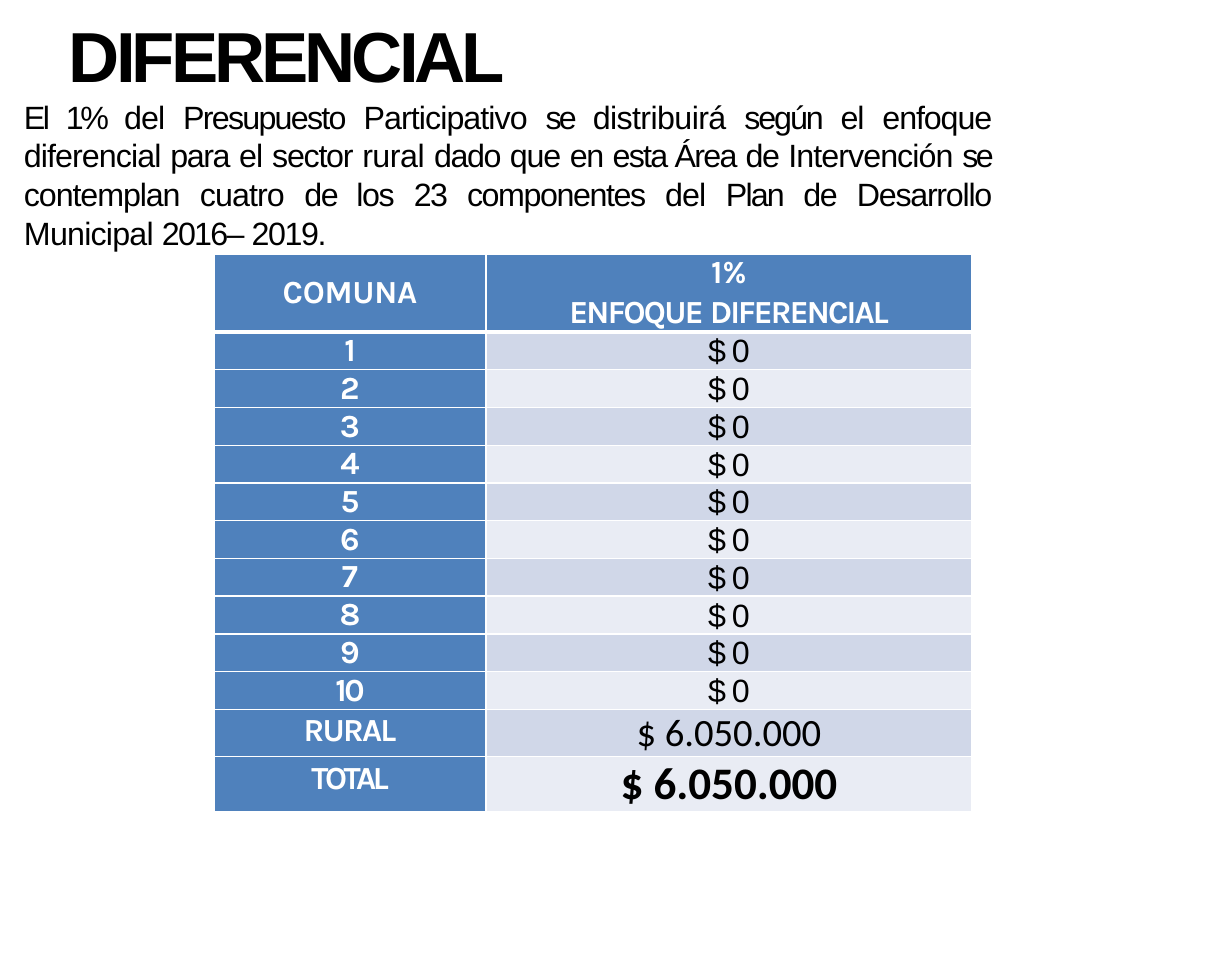
from lxml import etree
from pptx import Presentation
from pptx import util as u
from pptx.dml.color import RGBColor
from pptx.enum import text
from pptx.oxml.ns import qn

PX = 7890  # EMU per px
COLORS = {"ink": "000000", "white": "FFFFFF", "blue": "4F81BC",
          "band": "D0D7E8", "pale": "E9ECF4"}
SLIDE = (1232, 958)
TITLE_BOX = (68, 10, 511, 87)
INTRO_BOX = (23, 96, 968, 158)
TABLE_AT = (214, 254)
COLS = (272, 486)
HEADER_H, ROW_H, RURAL_H, TOTAL_H = 74, 37, 44, 50
LINE = 23.4  # points

TITLE = "DIFERENCIAL"
# Text with its letter spacing in points
INTRO = [
    ("El ", -1.7), ("1% ", -2.2), ("del ", -0.6), ("Presupuesto ", -1.1),
    ("Participativo ", -0.6), ("se ", -1.7), ("distribuirá ", -0.4),
    ("según ", -1.3), ("el ", -0.6), ("enfoque ", -0.7),
    ("diferencial ", -0.6), ("para ", -0.9), ("el ", -0.6),
    ("sector ", -0.8), ("rural ", -0.3), ("dado ", -0.9), ("que ", -0.8),
    ("en ", -0.9), ("esta Área ", -1.1), ("de ", -0.9),
    ("Intervención ", -0.6), ("se ", -1.7), ("contemplan ", -0.7),
    ("cuatro ", -0.6), ("de los ", -0.9), ("23 ", -1), ("componentes ", -0.9),
    ("del ", -0.6), ("Plan ", -1.2), ("de ", -0.9), ("Desarrollo ", -0.8),
    ("Municipal ", -0.5), ("2016– ", -1.1), ("2019.", -0.9),
]
HEADERS = ([("COMUNA", -0.2)],
           [("1%", -0.3)], [("ENFOQUE ", -1.1), ("DIFERENCIAL", -1.2)])
COMUNAS = [(str(n), -1.6 if n == 10 else 0, "$ 0") for n in range(1, 11)]
SUMS = [("RURAL", -1.1, "$ 6.050.000", 24, False),
        ("TOTAL", -2.1, "$ 6.050.000", 28, True)]


def write(p, runs, font="Arial", size=20, color="ink", bold=False,
          align=text.PP_ALIGN.CENTER, line=None, before=0):
    p.alignment = align
    p.space_before = u.Pt(before)
    if line:
        p.line_spacing = u.Pt(line)
    for words, spacing in runs:
        r = p.add_run()
        r.text = words
        r.font.name, r.font.size, r.font.bold = font, u.Pt(size), bold
        r.font.color.rgb = RGBColor.from_string(COLORS[color])
        r._r.get_or_add_rPr().set("spc", str(round(spacing * 100)))


def place(sp, box):
    sp.left, sp.top, sp.width, sp.height = (v * PX for v in box)


def set_frame(tf, anchor):
    tf.word_wrap = True
    tf.auto_size = text.MSO_AUTO_SIZE.NONE
    tf.vertical_anchor = anchor
    tf.margin_left = tf.margin_top = PX
    tf.margin_right = tf.margin_bottom = 0


def style_cell(cell, fill, top=1, bottom=1, inset=0, middle=False):
    """Set fill, white borders, margins and anchor of a table cell."""
    cell.fill.solid()
    cell.fill.fore_color.rgb = RGBColor.from_string(COLORS[fill])
    cell.margin_left = cell.margin_right = cell.margin_bottom = 0
    cell.margin_top = inset * PX
    cell.vertical_anchor = text.MSO_ANCHOR.MIDDLE if middle else text.MSO_ANCHOR.TOP
    tcPr = cell._tc.get_or_add_tcPr()
    sides = (("lnL", 1), ("lnR", 1), ("lnT", top), ("lnB", bottom))
    for i, (side, width) in enumerate(sides):
        ln = etree.Element(qn("a:" + side), w=str(u.Pt(width)))
        fill_el = etree.SubElement(ln, qn("a:solidFill"))
        etree.SubElement(fill_el, qn("a:srgbClr"), val=COLORS["white"])
        tcPr.insert(i, ln)


def add_budget_table(s):
    heights = [HEADER_H] + [ROW_H] * len(COMUNAS) + [RURAL_H, TOTAL_H]
    x, y = TABLE_AT
    table = s.shapes.add_table(len(heights), len(COLS), x * PX, y * PX,
                               sum(COLS) * PX, sum(heights) * PX).table
    table.horz_banding = False
    for col, width in zip(table.columns, COLS):
        col.width = width * PX
    for row, height in zip(table.rows, heights):
        row.height = height * PX

    label = dict(font="Karla", color="white", bold=True)
    comuna, share, focus = HEADERS
    left, right = table.cell(0, 0), table.cell(0, 1)
    style_cell(left, "blue", bottom=3, middle=True)
    write(left.text_frame.paragraphs[0], comuna, **label)
    style_cell(right, "blue", bottom=3)
    write(right.text_frame.paragraphs[0], share, line=LINE, **label)
    write(right.text_frame.add_paragraph(), focus, before=1.6, **label)

    def fill_row(i, name, spacing, amount, inset=0, line=None, middle=False, **money):
        top = 3 if i == 1 else 1
        left, right = table.cell(i, 0), table.cell(i, 1)
        style_cell(left, "blue", top=top, inset=inset)
        style_cell(right, "band" if i % 2 else "pale", top=top, middle=middle)
        write(left.text_frame.paragraphs[0], [(name, spacing)], line=line, **label)
        write(right.text_frame.paragraphs[0], [amount], line=line, **money)

    for i, (name, spacing, amount) in enumerate(COMUNAS, 1):
        fill_row(i, name, spacing, (amount, -1), line=LINE)
    for i, (name, spacing, amount, size, bold) in enumerate(SUMS, len(COMUNAS) + 1):
        fill_row(i, name, spacing, (amount, 0), inset=3, middle=True,
                 font="Calibri", size=size, bold=bold)


def main():
    prs = Presentation()
    prs.slide_width, prs.slide_height = (v * PX for v in SLIDE)
    s = prs.slides.add_slide(prs.slide_layouts[5])

    title = s.shapes.title
    place(title, TITLE_BOX)
    set_frame(title.text_frame, text.MSO_ANCHOR.MIDDLE)
    write(title.text_frame.paragraphs[0], [(TITLE, -2.5)], size=44, bold=True,
          align=text.PP_ALIGN.LEFT)

    intro = s.shapes.add_textbox(*(v * PX for v in INTRO_BOX))
    set_frame(intro.text_frame, text.MSO_ANCHOR.TOP)
    write(intro.text_frame.paragraphs[0], INTRO, align=text.PP_ALIGN.JUSTIFY)

    add_budget_table(s)
    prs.save("out.pptx")


if __name__ == "__main__":
    main()
